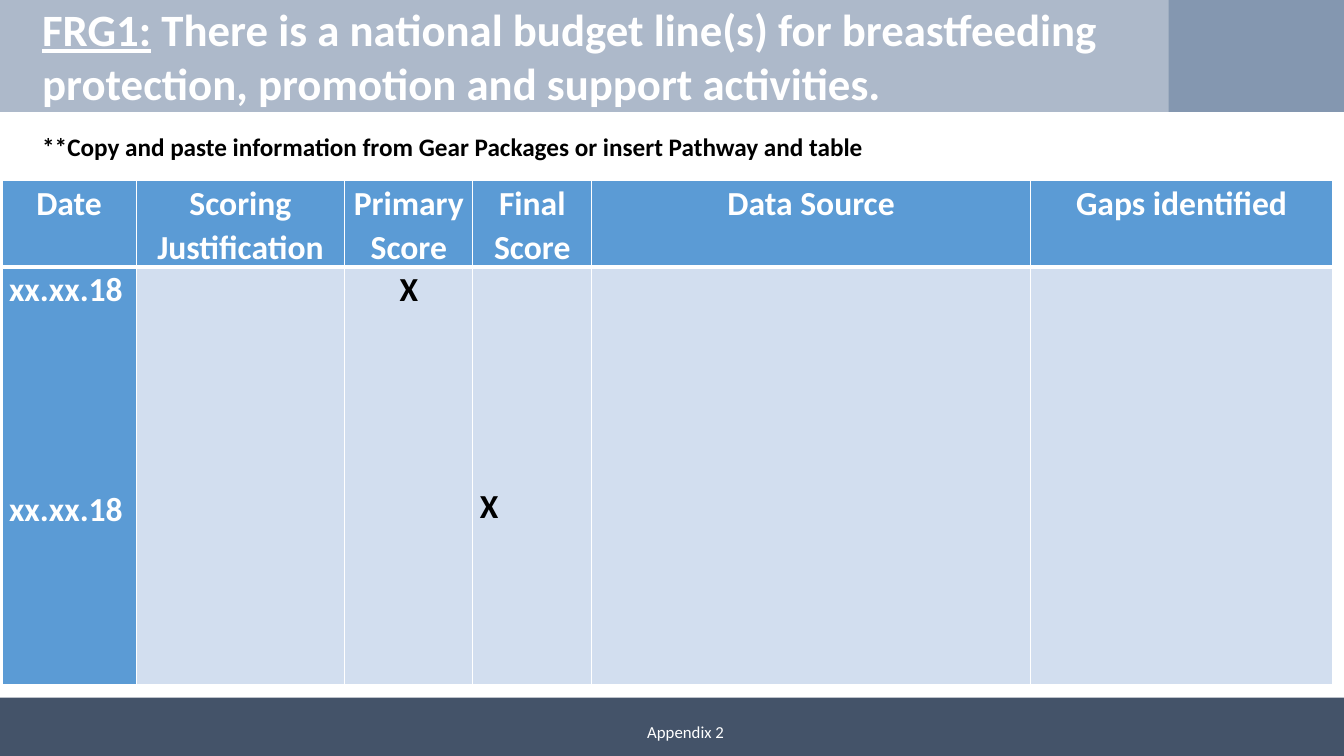
from lxml.etree import SubElement
from pptx import Presentation
from pptx.dml.color import RGBColor
from pptx.enum.shapes import MSO_SHAPE
from pptx.enum.text import MSO_ANCHOR, PP_ALIGN
from pptx.oxml.ns import qn
from pptx.util import Inches, Pt

COLORS = {
    "white": "FFFFFF", "black": "000000", "banner": "ADB9CA", "corner": "8497B0",
    "footer": "445369", "header": "5B9BD5", "body": "D2DEEF",
}
SLIDE_W, SLIDE_H = 13.33, 7.5
COLUMNS = [  # heading, width, vertical anchor
    ("Date", 1.33, MSO_ANCHOR.TOP),
    ("Scoring Justification", 2.07, MSO_ANCHOR.TOP),
    ("Primary Score", 1.27, MSO_ANCHOR.MIDDLE),
    ("Final Score", 1.18, MSO_ANCHOR.MIDDLE),
    ("Data Source", 4.35, MSO_ANCHOR.TOP),
    ("Gaps identified", 3.0, MSO_ANCHOR.TOP),
]
ROW_HEIGHTS = [0.79, 4.15]
ENTRIES = ["xx.xx.18\nxx.xx.18", "", "X", "X", "", ""]
SECOND_ENTRY_GAP = Pt(126)
FINAL_SCORE_DROP = 2.15


def rgb(name):
    return RGBColor.from_string(COLORS[name])


def inches(box):
    return [Inches(length) for length in box]


def format_run(run, size, color, bold=False):
    run.font.name = "Calibri"
    run.font.size = Pt(size)
    run.font.bold = bold
    run.font.color.rgb = rgb(color)


def add_band(slide, box, color):
    band = slide.shapes.add_shape(MSO_SHAPE.RECTANGLE, *inches(box))
    band.shadow.inherit = False
    band.fill.solid()
    band.fill.fore_color.rgb = rgb(color)
    band.line.fill.background()


def add_label(slide, box, anchor=MSO_ANCHOR.TOP):
    frame = slide.shapes.add_textbox(*inches(box)).text_frame
    frame.word_wrap = True
    frame.vertical_anchor = anchor
    return frame


def add_banner(slide, left, top, width, height):
    corner_width = 1.74
    add_band(slide, (left, top, width, height), "banner")
    add_band(slide, (left + width - corner_width, top, corner_width, height), "corner")
    title = add_label(slide, (left + 0.32, top + 0.15, 11.03, 0.8), MSO_ANCHOR.MIDDLE).paragraphs[0]
    for words in ("FRG1:", " There is a national budget line(s) for breastfeeding "
                  "protection, promotion and support activities."):
        run = title.add_run()
        run.text = words
        format_run(run, 32, "white", bold=True)
    title.runs[0].font.underline = True


def add_instruction(slide, *box):
    instruction = add_label(slide, box).paragraphs[0]
    instruction.text = "**Copy and paste information from Gear Packages or insert Pathway and table"
    instruction.line_spacing = 1.07
    format_run(instruction.runs[0], 18, "black", bold=True)


def add_footer(slide, left, top, width, height):
    add_band(slide, (left, top, width, height), "footer")
    appendix = add_label(slide, (left + 2.39, top + 0.14, 8.82, 0.4), MSO_ANCHOR.MIDDLE).paragraphs[0]
    appendix.text = "Appendix 2"
    appendix.alignment = PP_ALIGN.CENTER
    format_run(appendix.runs[0], 12, "white")


def style_cell(cell, fill, bottom_width):
    # Borders come before the fill in the cell properties
    properties = cell._tc.get_or_add_tcPr()
    for side, points in (("L", 1), ("R", 1), ("T", 1), ("B", bottom_width)):
        border = SubElement(properties, qn(f"a:ln{side}"), w=str(Pt(points)))
        border_fill = SubElement(border, qn("a:solidFill"))
        SubElement(border_fill, qn("a:srgbClr"), val=COLORS["white"])
    cell.fill.solid()
    cell.fill.fore_color.rgb = rgb(fill)
    cell.margin_left = cell.margin_right = Inches(0.07)
    cell.margin_top = cell.margin_bottom = 0


def fill_cell(cell, text, color, alignment):
    cell.text_frame.text = text
    for paragraph in cell.text_frame.paragraphs:
        paragraph.alignment = alignment
        paragraph.line_spacing = 1.07
        for run in paragraph.runs:
            format_run(run, 24, color, bold=True)


def add_score_table(slide, left, top):
    width = sum(column[1] for column in COLUMNS)
    box = inches((left, top, width, sum(ROW_HEIGHTS)))
    scores = slide.shapes.add_table(len(ROW_HEIGHTS), len(COLUMNS), *box).table
    for row, height in zip(scores.rows, ROW_HEIGHTS):
        row.height = Inches(height)

    for index, ((heading, column_width, anchor), entry) in enumerate(zip(COLUMNS, ENTRIES)):
        scores.columns[index].width = Inches(column_width)
        heading_cell, entry_cell = scores.cell(0, index), scores.cell(1, index)
        is_date = heading == "Date"

        style_cell(heading_cell, "header", 3)
        heading_cell.vertical_anchor = anchor
        fill_cell(heading_cell, heading, "white", PP_ALIGN.CENTER)

        style_cell(entry_cell, "header" if is_date else "body", 1)
        alignment = PP_ALIGN.CENTER if heading == "Primary Score" else PP_ALIGN.LEFT
        fill_cell(entry_cell, entry, "white" if is_date else "black", alignment)

    # The later date and the final score sit lower in the entry row
    scores.cell(1, 0).text_frame.paragraphs[1].space_before = SECOND_ENTRY_GAP
    scores.cell(1, 3).margin_top = Inches(FINAL_SCORE_DROP)


def main():
    deck = Presentation()
    deck.slide_width, deck.slide_height = Inches(SLIDE_W), Inches(SLIDE_H)
    slide = deck.slides.add_slide(deck.slide_layouts[6])
    add_banner(slide, 0, 0, SLIDE_W, 1.11)
    add_footer(slide, 0, 6.92, SLIDE_W, 0.67)
    add_score_table(slide, 0.02, 1.79)
    add_instruction(slide, 0.32, 1.23, 11.23, 0.43)
    deck.save("out.pptx")


if __name__ == "__main__":
    main()
